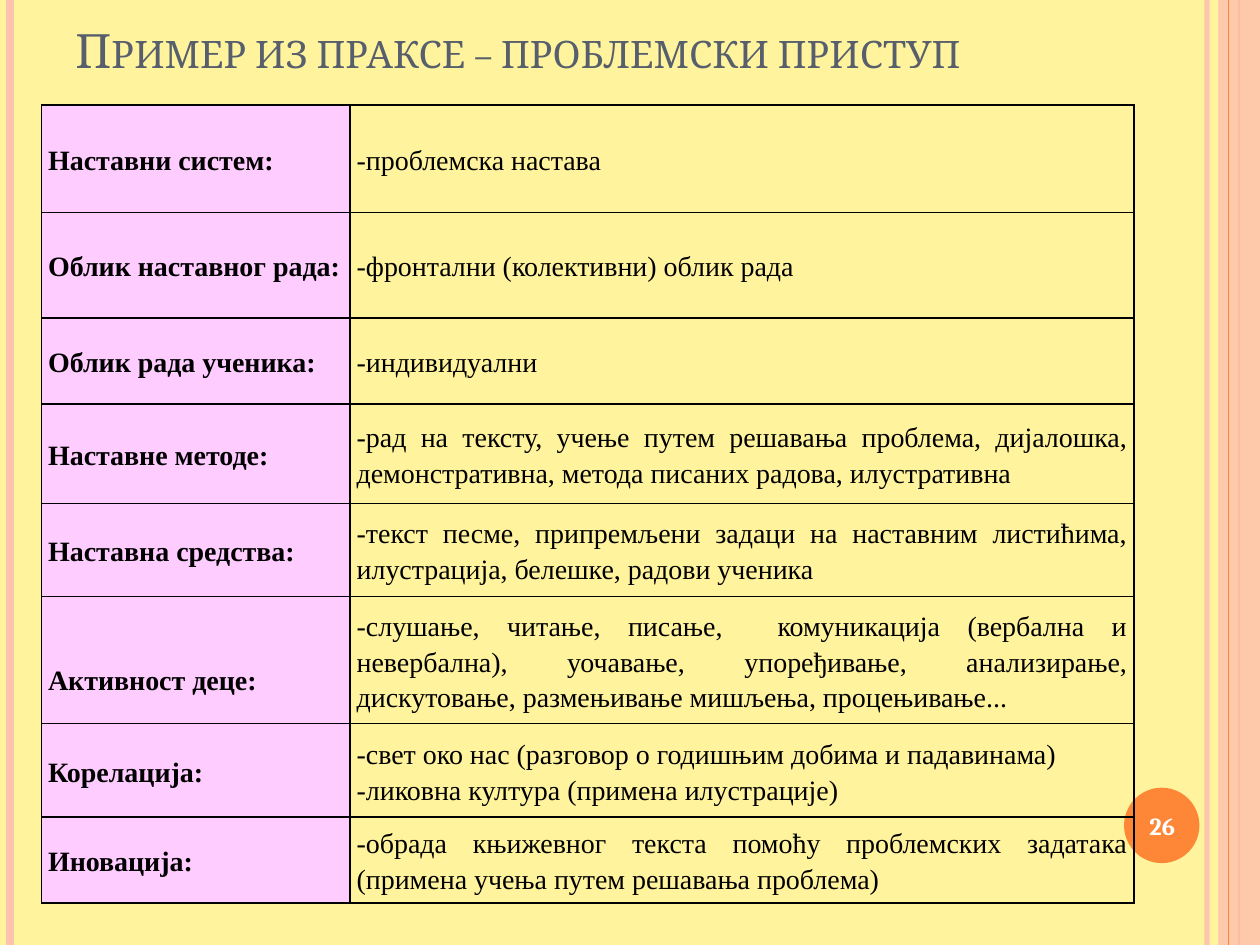
import dataclasses
import typing

import lxml.etree
import pptx
import pptx.dml.color
import pptx.enum.shapes
import pptx.enum.text
import pptx.oxml.ns
import pptx.util

Cm, Pt = pptx.util.Cm, pptx.util.Pt
RGB = pptx.dml.color.RGBColor
ALIGN = pptx.enum.text.PP_ALIGN
ANCHOR = pptx.enum.text.MSO_ANCHOR
SHAPE = pptx.enum.shapes.MSO_SHAPE
qn = pptx.oxml.ns.qn

CREAM = RGB(0xFF, 0xF3, 0x9D)
PEACH = RGB(0xFE, 0xC3, 0xAE)
ORANGE = RGB(0xFE, 0x86, 0x37)
SLATE = RGB(0x57, 0x5F, 0x6D)
PINK = RGB(0xFF, 0xCC, 0xFF)
BLACK = RGB(0, 0, 0)
WHITE = RGB(0xFF, 0xFF, 0xFF)

WIDE, HIGH = 25.4, 19.05


@dataclasses.dataclass
class Stripe:
    left: float
    color: RGB
    width: float
    alpha: int = 100


@dataclasses.dataclass
class Row:
    high: float
    label: str
    lines: tuple
    drop: float = 0


TITLE = {"size": Pt(27), "name": "Cambria", "color": SLATE}
NUMBER = {"size": Pt(14), "name": "Cambria", "color": WHITE, "bold": True}
BODY = {"size": Pt(16), "name": "Times New Roman", "color": BLACK, "bold": False}
LABEL = {**BODY, "bold": True}

BACK = [Stripe(24.33, PEACH, 3, 93), Stripe(0.2, PEACH, 4.5)]
MIDDLE = Stripe(24.98, ORANGE, 1.5)
FRONT = Stripe(24.77, ORANGE, 0.75)

COLS = (6.22, 15.8)
ROWS = [
    Row(2.16, "Наставни систем:", ("-проблемска настава",)),
    Row(2.13, "Облик наставног рада:", ("-фронтални (колективни) облик рада",)),
    Row(1.73, "Облик рада ученика:", ("-индивидуални",)),
    Row(2.01, "Наставне методе:", (
        "-рад на тексту, учење путем решавања проблема, дијалошка, "
        "демонстративна, метода писаних радова, илустративна",)),
    Row(1.88, "Наставна средства:", (
        "-текст песме, припремљени задаци на наставним листићима, "
        "илустрација, белешке, радови ученика",)),
    Row(2.56, "Активност деце:", (
        "-слушање, читање, писање,  комуникација (вербална и невербална), "
        "уочавање, упоређивање, анализирање, дискутовање, "
        "размењивање мишљења, процењивање...",), 0.73),
    Row(1.88, "Корелација:", (
        "-свет око нас (разговор о годишњим добима и падавинама)",
        "-ликовна култура (примена илустрације)")),
    Row(1.73, "Иновација:", (
        "-обрада књижевног текста помоћу проблемских задатака "
        "(примена учења путем решавања проблема)",)),
]


def fade(node: typing.Any, alpha: int) -> None:
    tone = node.find(".//" + qn("a:srgbClr"))
    lxml.etree.SubElement(tone, qn("a:alpha")).set("val", str(alpha * 1000))


def draw_line(slide: typing.Any, stripe: Stripe) -> typing.Any:
    left = Cm(stripe.left)
    line = slide.shapes.add_connector(
        pptx.enum.shapes.MSO_CONNECTOR.STRAIGHT, left, 0, left, Cm(HIGH))
    line.line.color.rgb = stripe.color
    line.line.width = Pt(stripe.width)
    props = line._element.spPr
    if stripe.alpha < 100:
        fade(props, stripe.alpha)
    lxml.etree.SubElement(props, qn("a:effectLst"))
    return line


def draw_shape(slide: typing.Any, kind: typing.Any, box: tuple, color: RGB) -> typing.Any:
    shape = slide.shapes.add_shape(kind, *map(Cm, box))
    shape.shadow.inherit = False
    shape.fill.solid()
    shape.fill.fore_color.rgb = color
    shape.line.fill.background()
    return shape


def write(para: typing.Any, text: str, form: dict) -> typing.Any:
    run = para.add_run()
    run.text = text
    for key, value in form.items():
        if key == "color":
            run.font.color.rgb = value
        else:
            setattr(run.font, key, value)
    return run


def add_text(slide: typing.Any, box: tuple, text: str, form: dict,
             anchor: typing.Any, align: typing.Any) -> typing.Any:
    frame = slide.shapes.add_textbox(*map(Cm, box)).text_frame
    frame.word_wrap = True
    frame.vertical_anchor = anchor
    frame.paragraphs[0].alignment = align
    return write(frame.paragraphs[0], text, form)


def add_edges(cell: typing.Any) -> None:
    props = cell._tc.get_or_add_tcPr()
    for spot, side in enumerate(("a:lnL", "a:lnR", "a:lnT", "a:lnB")):
        edge = lxml.etree.Element(qn(side), w=str(Pt(1)))
        fill = lxml.etree.SubElement(edge, qn("a:solidFill"))
        lxml.etree.SubElement(fill, qn("a:srgbClr"), val=str(BLACK))
        props.insert(spot, edge)


def fill_cell(cell: typing.Any, lines: tuple, form: dict, align: typing.Any,
              color: typing.Optional[RGB] = None, drop: float = 0) -> None:
    look = {"vertical_anchor": ANCHOR.MIDDLE, "margin_left": Cm(0.13),
            "margin_right": Cm(0.13), "margin_top": Cm(drop), "margin_bottom": 0}
    for key, value in look.items():
        setattr(cell, key, value)
    if color is None:
        cell.fill.background()
    else:
        cell.fill.solid()
        cell.fill.fore_color.rgb = color
    add_edges(cell)
    frame = cell.text_frame
    for spot, text in enumerate(lines):
        para = frame.add_paragraph() if spot else frame.paragraphs[0]
        para.alignment = align
        para.line_spacing = 1.15
        write(para, text, form)


def draw_table(slide: typing.Any) -> None:
    high = sum(row.high for row in ROWS)
    table = slide.shapes.add_table(
        len(ROWS), len(COLS), Cm(0.84), Cm(2.12), Cm(sum(COLS)), Cm(high)).table
    table.first_row = table.horz_banding = False
    for col, wide in zip(table.columns, COLS):
        col.width = Cm(wide)
    for spot, row in enumerate(ROWS):
        table.rows[spot].height = Cm(row.high)
        fill_cell(table.cell(spot, 0), (row.label,), LABEL, ALIGN.LEFT, PINK, row.drop)
        fill_cell(table.cell(spot, 1), row.lines, BODY, ALIGN.JUSTIFY)


def main() -> None:
    deck = pptx.Presentation()
    deck.slide_width, deck.slide_height = Cm(WIDE), Cm(HIGH)
    slide = deck.slides.add_slide(deck.slide_layouts[6])
    slide.background.fill.solid()
    slide.background.fill.fore_color.rgb = CREAM

    # Side stripes; the band lies over the line joined to it
    for stripe in BACK:
        draw_line(slide, stripe)
    band = draw_shape(slide, SHAPE.RECTANGLE, (24.56, 0, 0.84, HIGH), PEACH)
    fade(band._element.spPr, 87)
    line = draw_line(slide, MIDDLE)
    line.begin_connect(band, 0)
    line.end_connect(band, 2)
    line._element.addnext(band._element)
    draw_line(slide, FRONT)

    # Page number disc and title
    draw_shape(slide, SHAPE.OVAL, (22.66, 15.88, 1.52, 1.52), ORANGE)
    title = add_text(slide, (1.27, 0, 20.75, 1.7), "Пример из праксе – проблемски приступ",
                     TITLE, ANCHOR.BOTTOM, ALIGN.LEFT)
    title.font._element.set("cap", "small")
    add_text(slide, (22.58, 15.93, 1.7, 1.45), "26", NUMBER, ANCHOR.MIDDLE, ALIGN.CENTER)

    # Lesson plan
    draw_table(slide)
    deck.save("out.pptx")


if __name__ == "__main__":
    main()
